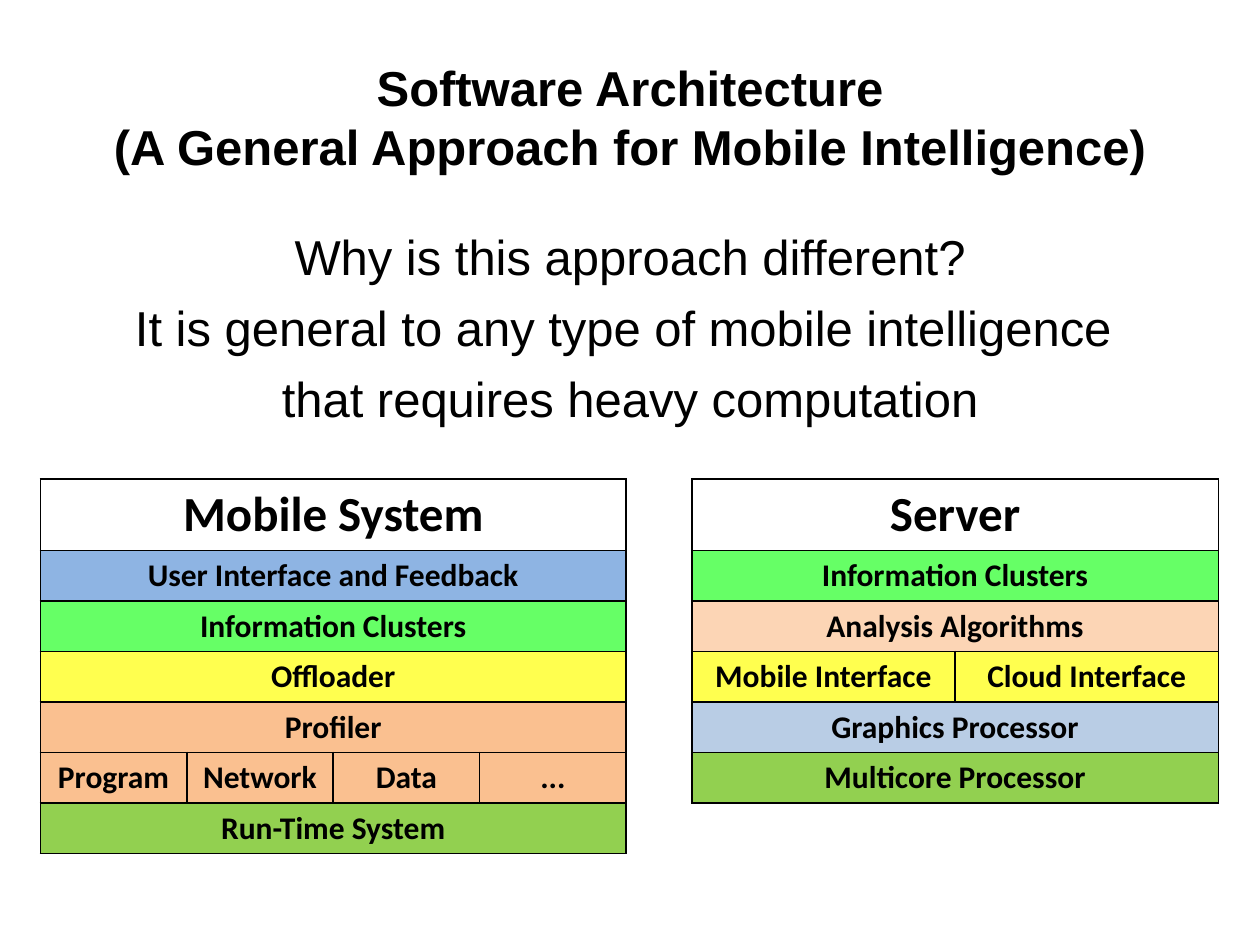
from dataclasses import dataclass

from lxml import etree
from pptx import Presentation
from pptx.dml.color import RGBColor
from pptx.enum.text import MSO_ANCHOR, PP_ALIGN
from pptx.oxml.ns import qn
from pptx.util import Inches, Pt

CENTER = PP_ALIGN.CENTER
TOP, MIDDLE = MSO_ANCHOR.TOP, MSO_ANCHOR.MIDDLE

# The slide is a grid of square units, ten to the inch.
COLUMNS, ROWS = 100, 75
HEADER_HEIGHT, LAYER_HEIGHT = 5.7, 4


@dataclass(frozen=True)
class Theme:
    heading_font: str = "Arial"
    table_font: str = "Calibri"
    large: int = 28
    small: int = 18
    paragraph_gap: int = 7
    border_width: int = 1
    black: str = "000000"
    blue: str = "8EB4E3"
    pale_blue: str = "B9CDE5"
    lime: str = "66FF66"
    green: str = "92D050"
    yellow: str = "FFFF4F"
    orange: str = "FAC090"
    peach: str = "FCD5B5"


THEME = Theme()

MOBILE_LAYERS = [
    (["User Interface and Feedback"], THEME.blue),
    (["Information Clusters"], THEME.lime),
    (["Offloader"], THEME.yellow),
    (["Profiler"], THEME.orange),
    (["Program", "Network", "Data", "..."], THEME.orange),
    (["Run-Time System"], THEME.green),
]
SERVER_LAYERS = [
    (["Information Clusters"], THEME.lime),
    (["Analysis Algorithms"], THEME.peach),
    (["Mobile Interface", "Cloud Interface"], THEME.yellow),
    (["Graphics Processor"], THEME.pale_blue),
    (["Multicore Processor"], THEME.green),
]


def units(count):
    return Inches(count / 10)


def add_run(paragraph, text, font_name, size, bold=False):
    run = paragraph.add_run()
    run.text = text
    run.font.name = font_name
    run.font.size = Pt(size)
    run.font.bold = bold
    run.font.color.rgb = RGBColor.from_string(THEME.black)


def add_text_box(slide, left, top, width, height, anchor):
    """Return the text frame of a new wrapping text box."""
    box = slide.shapes.add_textbox(units(left), units(top), units(width), units(height))
    frame = box.text_frame
    frame.word_wrap = True
    frame.vertical_anchor = anchor
    return frame


def add_title(slide, lines):
    frame = add_text_box(slide, 5, 3, 90, 12.5, MIDDLE)
    paragraph = frame.paragraphs[0]
    paragraph.alignment = CENTER
    for index, line in enumerate(lines):
        if index:
            paragraph.add_line_break()
        add_run(paragraph, line, THEME.heading_font, THEME.large, bold=True)


def add_body(slide, lines):
    frame = add_text_box(slide, 5, 17.5, 90, 49.5, TOP)
    for index, line in enumerate(lines):
        paragraph = frame.add_paragraph() if index else frame.paragraphs[0]
        paragraph.alignment = CENTER
        if index:
            paragraph.space_before = Pt(THEME.paragraph_gap)
        add_run(paragraph, line, THEME.heading_font, THEME.large)


def add_borders(cell):
    properties = cell._tc.get_or_add_tcPr()
    for side in ("a:lnL", "a:lnR", "a:lnT", "a:lnB"):
        line = etree.SubElement(properties, qn(side), w=str(Pt(THEME.border_width)))
        fill = etree.SubElement(line, qn("a:solidFill"))
        etree.SubElement(fill, qn("a:srgbClr"), val=THEME.black)


def style_cell(cell, fill_color):
    add_borders(cell)
    if fill_color:
        cell.fill.solid()
        cell.fill.fore_color.rgb = RGBColor.from_string(fill_color)
    else:
        cell.fill.background()


def add_stack(slide, left, top, width, heading, layers):
    """Draw a layered system as a table; a layer with one label spans all columns."""
    column_count = max(len(labels) for labels, _ in layers)
    rows = [([heading], None)] + layers
    height = HEADER_HEIGHT + LAYER_HEIGHT * len(layers)
    table = slide.shapes.add_table(
        len(rows), column_count, units(left), units(top), units(width), units(height)
    ).table
    table.first_row = False
    table.horz_banding = False
    for column in table.columns:
        column.width = units(width / column_count)

    for row_index, (labels, fill_color) in enumerate(rows):
        is_header = row_index == 0
        table.rows[row_index].height = units(HEADER_HEIGHT if is_header else LAYER_HEIGHT)
        for column_index in range(column_count):
            style_cell(table.cell(row_index, column_index), fill_color)
        if len(labels) == 1:
            last_cell = table.cell(row_index, column_count - 1)
            table.cell(row_index, 0).merge(last_cell)
        for column_index, label in enumerate(labels):
            paragraph = table.cell(row_index, column_index).text_frame.paragraphs[0]
            paragraph.alignment = CENTER
            size = THEME.large if is_header else THEME.small
            add_run(paragraph, label, THEME.table_font, size, bold=True)


def main():
    presentation = Presentation()
    presentation.slide_width = units(COLUMNS)
    presentation.slide_height = units(ROWS)
    slide = presentation.slides.add_slide(presentation.slide_layouts[6])
    add_title(slide, [
        "Software Architecture",
        "(A General Approach for Mobile Intelligence)",
    ])
    add_body(slide, [
        "Why is this approach different?",
        "It is general to any type of mobile intelligence ",
        "that requires heavy computation",
    ])
    add_stack(slide, 3.2, 38, 46.5, "Mobile System", MOBILE_LAYERS)
    add_stack(slide, 54.9, 38, 41.8, "Server", SERVER_LAYERS)
    presentation.save("out.pptx")


if __name__ == "__main__":
    main()
